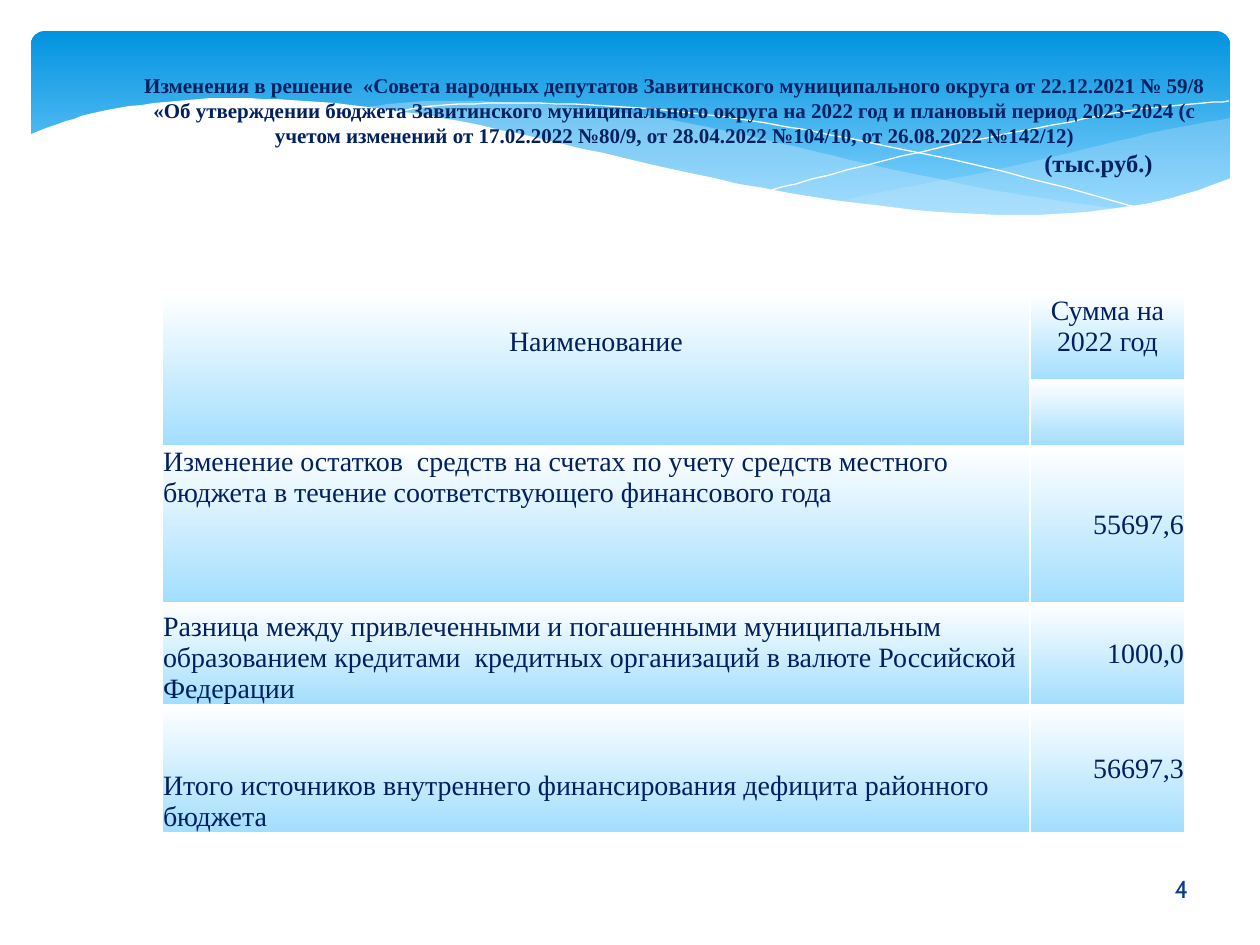
"""Build the slide on 2022 budget amendments with its table of deficit financing sources."""
from lxml.etree import SubElement
from pptx import Presentation
from pptx.dml.color import RGBColor
from pptx.enum.shapes import MSO_SHAPE
from pptx.enum.text import MSO_ANCHOR, PP_ALIGN
from pptx.oxml.ns import qn
from pptx.util import Pt

PX = 914400 // 126
COLORS = {
    "navy": "002060", "number": "073E87", "white": "FFFFFF", "mist": "C6E7FC",
    "sky_top": "0293E0", "sky_bottom": "83D3FE", "cell_bottom": "A2DEFE",
}
RGB = {name: RGBColor.from_string(value) for name, value in COLORS.items()}


def write(frame, text, size=16, font="Times New Roman", color="navy", bold=False,
          align=PP_ALIGN.LEFT, indent=0):
    paragraph = frame.paragraphs[0]
    if paragraph.runs:
        paragraph = frame.add_paragraph()
    paragraph.alignment = align
    if indent:
        paragraph._p.get_or_add_pPr().set("marL", str(indent * PX))
    run = paragraph.add_run()
    run.text = text
    run.font.size = Pt(size)
    run.font.name = font
    run.font.bold = bold
    run.font.color.rgb = RGB[color]


def smooth_curve(knots, steps=5):
    padded = [knots[0], *knots, knots[-1]]
    curve = [knots[0]]
    for a, b, c, d in zip(padded, padded[1:], padded[2:], padded[3:]):
        for step in range(1, steps + 1):
            t = step / steps
            curve.append(tuple(
                (2 * q + (r - p) * t + (2 * p - 5 * q + 4 * r - s) * t ** 2
                 + (3 * q - p - 3 * r + s) * t ** 3) / 2
                for p, q, r, s in zip(a, b, c, d)))
    return curve


deck = Presentation()
deck.slide_width = 1260 * PX
deck.slide_height = 945 * PX
slide = deck.slides.add_slide(deck.slide_layouts[6])
shapes = slide.shapes

banner = shapes.add_shape(MSO_SHAPE.ROUNDED_RECTANGLE, 31 * PX, 31 * PX, 1199 * PX, 197 * PX)
banner.adjustments[0] = 0.07
banner.shadow.inherit = False
banner.line.fill.background()
banner.fill.gradient()
banner.fill.gradient_angle = 270
for stop, color, position in zip(banner.fill.gradient_stops, ("sky_top", "sky_bottom"), (0, 0.9)):
    stop.color.rgb = RGB[color]
    stop.position = position

right_wave = [
    [(1230, 118), (1160, 131), (1085, 149), (982, 173), (919, 185), (833, 202)],
    [(833, 202), (906, 212), (969, 216), (1038, 217), (1098, 213), (1150, 204),
     (1195, 192), (1230, 178)],
]
long_wave = [
    [(1125, 210), (1017, 194), (890, 169), (793, 146), (682, 122), (586, 108),
     (479, 101), (413, 102), (360, 108)],
    [(360, 108), (431, 118), (509, 134), (619, 159), (713, 180), (819, 199),
     (910, 212), (989, 217), (1056, 217), (1125, 210)],
]
falling_line = [[(389, 113), (433, 106), (505, 103), (591, 105), (672, 111), (766, 123),
                 (876, 144), (1002, 171), (1143, 209)]]
rising_line = [[(772, 190), (847, 170), (942, 147), (1053, 125), (1128, 111),
                (1182, 105), (1229, 101)]]
white_wave = [
    [(1231, 178), (1172, 198), (1102, 210), (1019, 215), (915, 210), (789, 193),
     (667, 168), (563, 144), (460, 121), (368, 107), (290, 100), (223, 98),
     (166, 102), (107, 110), (66, 121), (29, 135)],
    [(29, 282)],
    [(1231, 282)],
]
for edges, color, opacity in (
    (right_wave, "mist", 29),
    (long_wave, "mist", 40),
    (falling_line, None, 100),
    (rising_line, None, 100),
    (white_wave, "white", 100),
):
    outline = [point for edge in edges for point in (smooth_curve(edge) if edge[1:] else edge)]
    builder = shapes.build_freeform(*outline[0], scale=PX)
    builder.add_line_segments(outline[1:], close=color is not None)
    wave = builder.convert_to_shape()
    wave.shadow.inherit = False
    if color is None:
        wave.fill.background()
        wave.line.color.rgb = RGB["white"]
        wave.line.width = Pt(0)
        continue
    wave.line.fill.background()
    wave.fill.solid()
    wave.fill.fore_color.rgb = RGB[color]
    if opacity < 100:
        tint = wave._element.spPr.find(qn("a:solidFill"))[0]
        SubElement(tint, qn("a:alpha")).set("val", str(opacity * 1000))

heading = shapes.add_textbox(129 * PX, 66 * PX, 1092 * PX, 110 * PX).text_frame
heading.word_wrap = True
write(heading, "Изменения в решение  «Совета народных депутатов Завитинского муниципального округа "
      "от 22.12.2021 № 59/8 «Об утверждении бюджета Завитинского муниципального округа на 2022 год "
      "и плановый период 2023-2024 (с учетом изменений от 17.02.2022 №80/9, от 28.04.2022 №104/10, "
      "от 26.08.2022 №142/12)", size=12, bold=True, align=PP_ALIGN.CENTER)
write(heading, "(тыс.руб.)", size=14, bold=True, indent=903)

page_number = shapes.add_textbox(1142 * PX, 864 * PX, 79 * PX, 50 * PX).text_frame
page_number.word_wrap = True
page_number.vertical_anchor = MSO_ANCHOR.MIDDLE
write(page_number, "4", size=14, font="Cabin", color="number", align=PP_ALIGN.CENTER)

column_widths = (868, 155)
row_heights = (86, 64, 157, 97, 128)
sources = shapes.add_table(5, 2, 162 * PX, 294 * PX, sum(column_widths) * PX,
                           sum(row_heights) * PX).table
sources.first_row = False
sources.horz_banding = False
for column, width in zip(sources.columns, column_widths):
    column.width = width * PX
for row, height in zip(sources.rows, row_heights):
    row.height = height * PX
sources.cell(0, 0).merge(sources.cell(1, 0))

rows = (
    ("Наименование", "Сумма на 2022 год"),
    ("", ""),
    ("Изменение остатков  средств на счетах по учету средств местного бюджета "
     "в течение соответствующего финансового года", "55697,6"),
    ("Разница между привлеченными и погашенными муниципальным образованием кредитами  "
     "кредитных организаций в валюте Российской Федерации", "1000,0"),
    ("Итого источников внутреннего финансирования дефицита районного бюджета", "56697,3"),
)
for r, texts in enumerate(rows):
    for c, text in enumerate(texts):
        cell = sources.cell(r, c)
        cell.margin_left = cell.margin_right = cell.margin_top = PX
        cell.margin_bottom = 0
        for side in ("lnL", "lnR", "lnT", "lnB"):
            border = SubElement(cell._tc.get_or_add_tcPr(), qn(f"a:{side}"), w=str(Pt(1)))
            paint = SubElement(border, qn("a:solidFill"))
            SubElement(paint, qn("a:srgbClr"), val=COLORS["white"])
        cell.fill.gradient()
        cell.fill.gradient_angle = 270
        for stop, color in zip(cell.fill.gradient_stops, ("white", "cell_bottom")):
            stop.color.rgb = RGB[color]
        if not text:
            continue
        if r == 0:
            align = PP_ALIGN.CENTER
        elif c == 1:
            align = PP_ALIGN.RIGHT
            cell.vertical_anchor = MSO_ANCHOR.MIDDLE
        else:
            align = PP_ALIGN.LEFT
            cell.vertical_anchor = MSO_ANCHOR.TOP if r == 2 else MSO_ANCHOR.BOTTOM
        write(cell.text_frame, text, align=align)
sources.cell(0, 0).margin_top = 32 * PX

deck.save("out.pptx")
